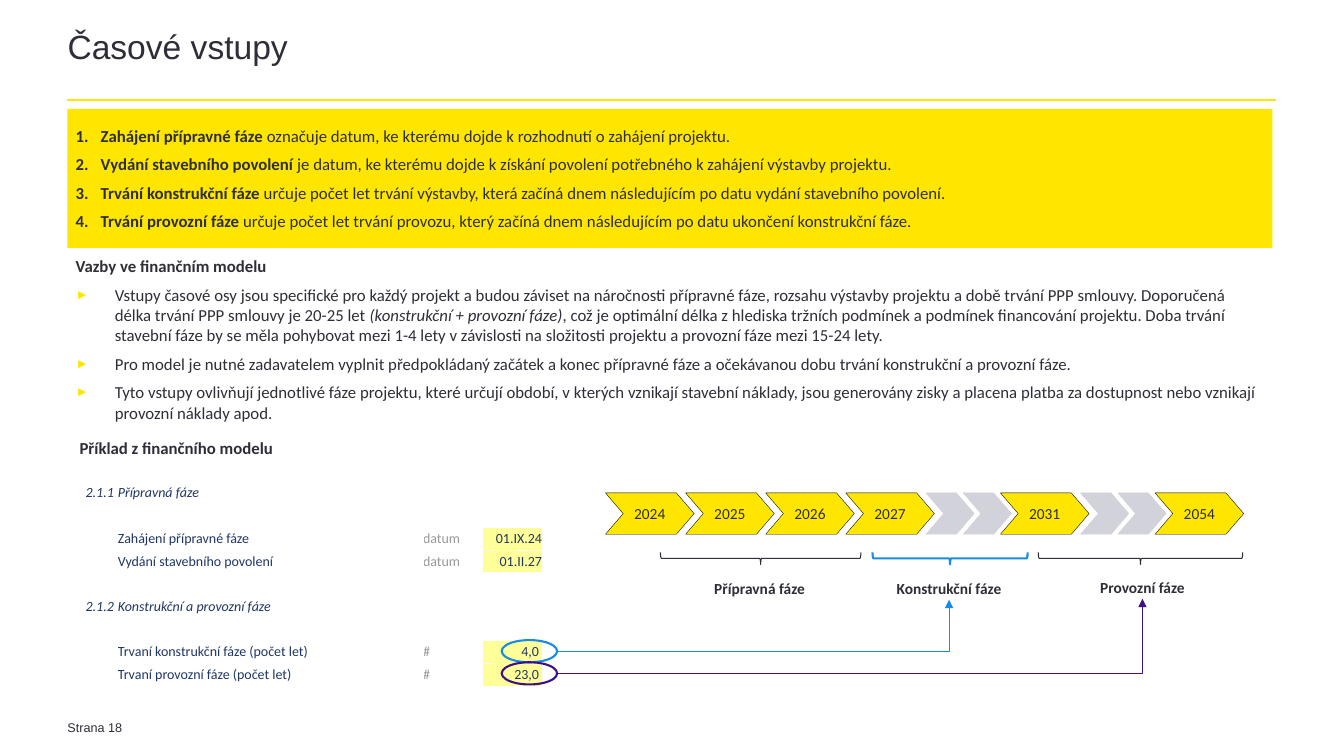
import pptx
import pptx.dml.color
import pptx.enum.dml
import pptx.enum.shapes
import pptx.enum.text
import pptx.oxml
import pptx.oxml.ns
import pptx.util
from lxml import etree

Inches = pptx.util.Inches
Pt = pptx.util.Pt
SHAPE = pptx.enum.shapes.MSO_SHAPE
CONNECTOR = pptx.enum.shapes.MSO_CONNECTOR
ALIGN = pptx.enum.text.PP_ALIGN
ANCHOR = pptx.enum.text.MSO_ANCHOR
qn = pptx.oxml.ns.qn

YELLOW, DARK, GREY = "FFE600", "2E2E38", "D2D2DA"
BLUE, PURPLE, NAVY = "188CE5", "3D108A", "203764"


def rgb(color):
    return pptx.dml.color.RGBColor.from_string(color)


def child(parent, tag, **attrs):
    return etree.SubElement(parent, qn(tag), attrs)


class Deck:
    font = "Calibri"

    def __init__(self):
        self.prs = pptx.Presentation()
        self.prs.slide_width, self.prs.slide_height = Inches(13.34), Inches(7.5)
        self.slide = self.prs.slides.add_slide(self.prs.slide_layouts[1])
        self.shapes = self.slide.shapes

    def bullet(self, p, kind, indent):
        pPr = p._p.get_or_add_pPr()
        pPr.set("marL", str(Inches(indent)))
        pPr.set("indent", str(-Inches(indent)))
        if kind == "number":
            child(pPr, "a:buFont", typeface="+mj-lt")
            child(pPr, "a:buAutoNum", type="arabicPeriod")
        elif kind == "arrow":
            child(child(pPr, "a:buClr"), "a:srgbClr", val=YELLOW)
            child(pPr, "a:buSzPct", val="80000")
            child(pPr, "a:buFont", typeface="Arial")
            child(pPr, "a:buChar", char="►")
        else:
            child(pPr, "a:buNone")

    def style(self, p, size, color=DARK, bold=False, italic=False, font=None, align=ALIGN.LEFT):
        p.alignment = align
        p.space_before = Pt(0)
        p.font.name, p.font.size = font or self.font, Pt(size)
        p.font.bold, p.font.italic = bold, italic
        p.font.color.rgb = rgb(color)

    def frame(self, tf, insets, anchor=ANCHOR.TOP):
        tf.word_wrap = True
        tf.auto_size = pptx.enum.text.MSO_AUTO_SIZE.NONE
        tf.vertical_anchor = anchor
        tf.margin_left = tf.margin_right = Inches(insets[0])
        tf.margin_top = tf.margin_bottom = Inches(insets[1])

    def paragraphs(self, tf, items, size=12, after=6, **style):
        for i, (kind, indent, runs) in enumerate(items):
            p = tf.paragraphs[0] if i == 0 else tf.add_paragraph()
            self.bullet(p, kind, indent)
            self.style(p, size, **style)
            p.space_after = Pt(after)
            for text, look in runs:
                r = p.add_run()
                r.text = text
                if look == "b":
                    r.font.bold = True
                elif look == "i":
                    r.font.italic = True

    def place(self, sp, box):
        sp.left, sp.top, sp.width, sp.height = map(Inches, box)
        return sp

    def title(self, text, box):
        tf = self.place(self.shapes.title, box).text_frame
        self.frame(tf, (0, 0))
        self.paragraphs(tf, [(None, 0, [(text, "")])], 24, 0, font="Arial")
        tf.paragraphs[0].line_spacing = 0.85

    def body(self, items, box):
        tf = self.place(self.slide.placeholders[1], box).text_frame
        self.frame(tf, (0.08, 0.12))
        self.paragraphs(tf, items)

    def text(self, text, box, insets=(0, 0.02), anchor=ANCHOR.MIDDLE, **style):
        tf = self.shapes.add_textbox(*map(Inches, box)).text_frame
        self.frame(tf, insets, anchor)
        self.paragraphs(tf, [(None, 0, [(text, "")])], after=0, **style)

    def shape(self, kind, box, fill=None, line=None, width=0.75):
        sp = self.shapes.add_shape(kind, *map(Inches, box))
        sp.shadow.inherit = False
        if fill:
            sp.fill.solid()
            sp.fill.fore_color.rgb = rgb(fill)
        else:
            sp.fill.background()
        if line:
            sp.line.color.rgb = rgb(line)
            sp.line.width = Pt(width)
        else:
            sp.line.fill.background()
        return sp

    def connector(self, kind, start, end, color, width):
        cx = self.shapes.add_connector(kind, *map(Inches, start + end))
        cx.line.color.rgb = rgb(color)
        cx.line.width = Pt(width)
        child(cx._element.spPr, "a:effectLst")
        return cx

    def elbow_arrow(self, start, end, color):
        cx = self.connector(CONNECTOR.ELBOW, start, end, color, 0.75)
        cx._element.spPr.find(qn("a:prstGeom")).set("prst", "bentConnector2")
        child(cx.line._get_or_add_ln(), "a:tailEnd", type="triangle")

    def cell_border(self, cell):
        tcPr = cell._tc.get_or_add_tcPr()
        for i, side in enumerate(("a:lnL", "a:lnR", "a:lnT", "a:lnB")):
            ln = etree.Element(qn(side), w=str(Pt(0.5)))
            child(child(ln, "a:solidFill"), "a:srgbClr", val="FFFFFF")
            child(ln, "a:prstDash", val="sysDot")
            tcPr.insert(i, ln)

    def table(self, rows, left, top, widths, row_height):
        gf = self.shapes.add_table(len(rows), len(widths), Inches(left), Inches(top),
                                   Inches(sum(widths)), Inches(row_height * len(rows)))
        table = gf.table
        table.first_row = table.horz_banding = False
        for column, width in zip(table.columns, widths):
            column.width = Inches(width)
        for row, values in zip(table.rows, rows):
            row.height = Inches(row_height)
            for c, (cell, value) in enumerate(zip(row.cells, values)):
                cell.margin_left = cell.margin_right = cell.margin_top = cell.margin_bottom = 0
                cell.vertical_anchor = ANCHOR.MIDDLE
                cell.text = value
                self.style(cell.text_frame.paragraphs[0], 10, "999999" if c == 2 else NAVY,
                           italic=bool(values[0]), align=ALIGN.RIGHT if c == 3 else ALIGN.LEFT)
                if not value:
                    child(cell.text_frame.paragraphs[0]._p, "a:endParaRPr", sz="1000")
                if c == 3 and value:
                    cell.fill.solid()
                    cell.fill.fore_color.rgb = rgb("FFFF99")
                    self.cell_border(cell)
                    if "," in value:
                        cell.margin_right = Inches(0.03)
                else:
                    cell.fill.background()


def main():
    d = Deck()
    d.title("Časové vstupy", (0.67, 0.32, 12.01, 0.65))
    d.connector(CONNECTOR.STRAIGHT, (0.67, 0.99), (12.67, 0.99), YELLOW, 1.5)
    d.text("Strana 18", (0.67, 7.12, 1, 0.2), size=9, font="Arial")

    definitions = [
        ("Zahájení přípravné fáze", "označuje datum, ke kterému dojde k rozhodnutí o zahájení projektu."),
        ("Vydání stavebního povolení", "je datum, ke kterému dojde k získání povolení potřebného k zahájení výstavby projektu."),
        ("Trvání konstrukční fáze", "určuje počet let trvání výstavby, která začíná dnem následujícím po datu vydání stavebního povolení."),
        ("Trvání provozní fáze", "určuje počet let trvání provozu, který začíná dnem následujícím po datu ukončení konstrukční fáze."),
    ]
    tf = d.shape(SHAPE.RECTANGLE, (0.67, 1.08, 11.96, 1.38), YELLOW).text_frame
    d.frame(tf, (0.08, 0.04), ANCHOR.MIDDLE)
    d.paragraphs(tf, [("number", 0.25, [(term + " ", "b"), (meaning, "")]) for term, meaning in definitions])

    d.body([
        (None, 0, [("Vazby ve finančním modelu", "b")]),
        ("arrow", 0.39, [
            ("Vstupy časové osy jsou specifické pro každý projekt a budou záviset na náročnosti přípravné fáze, rozsahu výstavby projektu a době trvání PPP smlouvy. Doporučená délka trvání PPP smlouvy je 20-25 let ", ""),
            ("(konstrukční + provozní fáze)", "i"),
            (", což je optimální délka z hlediska tržních podmínek a podmínek financování projektu. Doba trvání stavební fáze by se měla pohybovat mezi 1-4 lety v závislosti na složitosti projektu a provozní fáze mezi 15-24 lety.", "")]),
        ("arrow", 0.39, [("Pro model je nutné zadavatelem vyplnit předpokládaný začátek a konec přípravné fáze a očekávanou dobu trvání konstrukční a provozní fáze.", "")]),
        ("arrow", 0.39, [("Tyto vstupy ovlivňují jednotlivé fáze projektu, které určují období, v kterých vznikají stavební náklady, jsou generovány zisky a placena platba za dostupnost nebo vznikají provozní náklady apod.", "")]),
    ], (0.67, 2.42, 11.96, 1.9))
    d.text("Příklad z finančního modelu", (0.67, 4.22, 11.96, 0.44), (0.12, 0.12), ANCHOR.TOP, bold=True)

    blank = ("", "", "", "")
    d.table([
        ("2.1.1", "Přípravná fáze", "", ""),
        blank,
        ("", "Zahájení přípravné fáze", "datum", "01.IX.24"),
        ("", "Vydání stavebního povolení", "datum", "01.II.27"),
        blank,
        ("2.1.2", "Konstrukční a provozní fáze", "", ""),
        blank,
        ("", "Trvaní konstrukční fáze (počet let)", "#", "4,0"),
        ("", "Trvaní provozní fáze (počet let)", "#", "23,0"),
    ], 0.85, 4.78, (0.32, 3.03, 0.59, 0.59), 2.03 / 9)

    for top, target, color in ((6.35, (9.42, 5.95), BLUE), (6.57, (11.34, 5.94), PURPLE)):
        d.shape(SHAPE.OVAL, (4.98, top, 0.55, 0.22), line=color, width=1.5)
        d.elbow_arrow((5.53, top + 0.11), target, color)

    phases = [
        ("Přípravná fáze", 7.55, 1.99, DARK, 0.75, 7.54, 5.72),
        ("Konstrukční fáze", 9.43, 1.54, BLUE, 1.5, 9.42, 5.72),
        ("Provozní fáze", 11.32, 2.03, DARK, 0.75, 11.34, 5.71),
    ]
    for name, middle, span, color, width, label_middle, label_top in phases:
        brace = d.shape(SHAPE.RIGHT_BRACE, (middle - 0.06, 5.54 - span / 2, 0.12, span), line=color, width=width)
        brace.rotation = 90
        d.text(name, (label_middle - 0.8, label_top, 1.6, 0.23), size=11, bold=True, align=ALIGN.CENTER)

    left = 6.01
    for year in ("2024", "2025", "2026", "2027", "", "", "2031", "", "", "2054"):
        width, step, fill, line = (0.88, 0.795, YELLOW, "000000") if year else (0.48, 0.37, GREY, GREY)
        sp = d.shape(SHAPE.CHEVRON, (left, 4.89, width, 0.41), fill, line, 0.25)
        sp.adjustments[0] = 0.43
        if year:
            d.frame(sp.text_frame, (0, 0.02), ANCHOR.MIDDLE)
            d.paragraphs(sp.text_frame, [(None, 0, [(year, "")])], 11, 0, align=ALIGN.CENTER)
        left += step

    d.prs.save("out.pptx")


if __name__ == "__main__":
    main()
